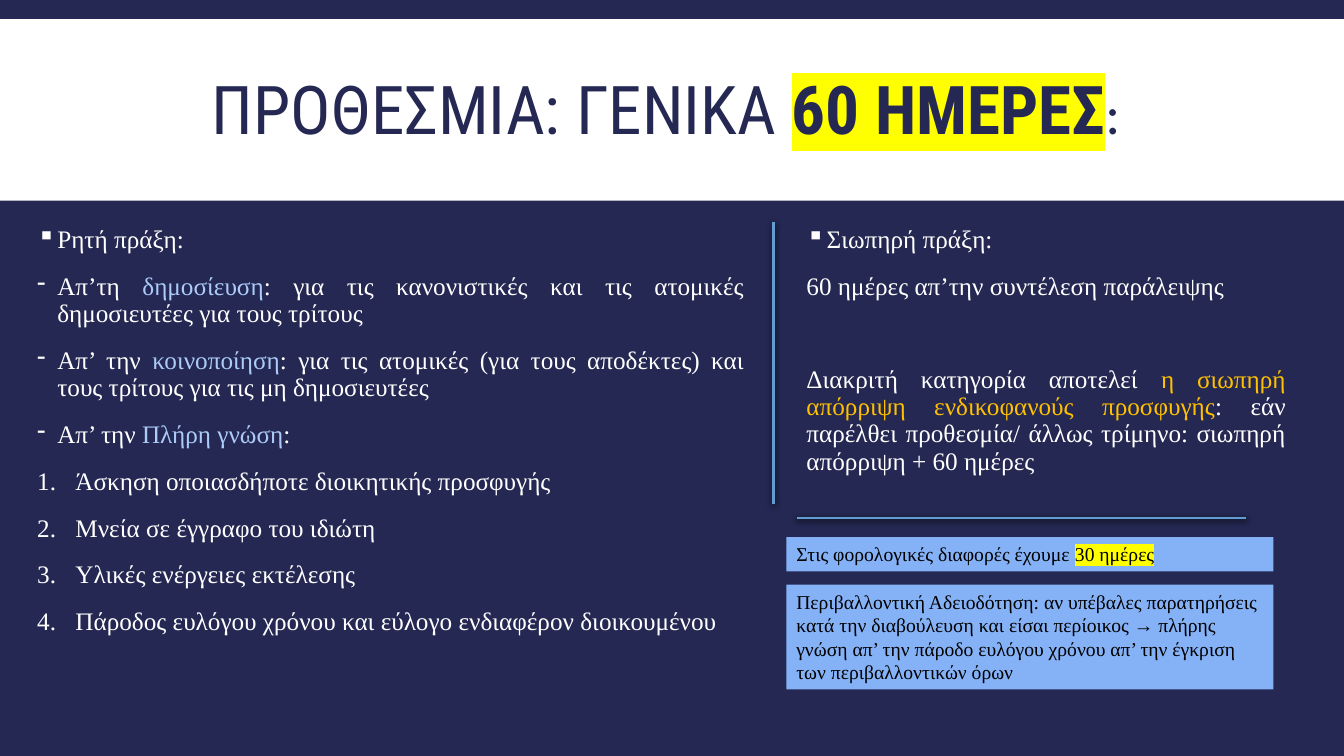
from lxml import etree
from pptx import Presentation
from pptx.dml.color import RGBColor
from pptx.enum.shapes import MSO_CONNECTOR, MSO_SHAPE
from pptx.enum.text import MSO_ANCHOR, PP_ALIGN
from pptx.oxml import parse_xml
from pptx.oxml.ns import nsdecls, qn
from pptx.util import Inches, Pt

NAVY, WHITE, BLACK, YELLOW = "242852", "FFFFFF", "000000", "FFFF00"
PALE, ORANGE, LINE, BOX = "ACCBF9", "FFC000", "629DD1", "85B2F6"
SERIF = "Times New Roman"


def rgb(color):
    return RGBColor.from_string(color)


def add_run(p, text, size, font, color, highlight=None):
    r = p.add_run()
    r.text = text
    r.font.size, r.font.name = Pt(size), font
    r.font.color.rgb = rgb(color)
    if highlight:
        fill = r.font._element.find(qn("a:solidFill"))
        fill.addnext(parse_xml(f'<a:highlight {nsdecls("a")}>'
                               f'<a:srgbClr val="{highlight}"/></a:highlight>'))
    return r


prs = Presentation()
prs.slide_width, prs.slide_height = Inches(13.33), Inches(7.5)
s = prs.slides.add_slide(prs.slide_layouts[6])
s.background.fill.solid()
s.background.fill.fore_color.rgb = rgb(NAVY)

# Title band and the two note boxes
bands = [
    (0, 0.19, 13.33, 1.8, WHITE, []),
    (7.8, 5.33, 4.83, 0.34, BOX,
     [("Στις φορολογικές διαφορές έχουμε ", None), ("30 ημέρες", YELLOW)]),
    (7.8, 5.8, 4.83, 1.04, BOX,
     [("Περιβαλλοντική Αδειοδότηση: αν υπέβαλες παρατηρήσεις κατά την διαβούλευση "
       "και είσαι περίοικος → πλήρης γνώση απ’ την πάροδο ευλόγου χρόνου απ’ την "
       "έγκριση των περιβαλλοντικών όρων", None)]),
]
for x, y, w, h, color, runs in bands:
    sp = s.shapes.add_shape(MSO_SHAPE.RECTANGLE, Inches(x), Inches(y), Inches(w), Inches(h))
    sp.shadow.inherit = False
    sp.fill.solid()
    sp.fill.fore_color.rgb = rgb(color)
    sp.line.fill.background()
    tf = sp.text_frame
    tf.word_wrap, tf.vertical_anchor = True, MSO_ANCHOR.TOP
    tf.paragraphs[0].alignment = PP_ALIGN.LEFT
    for text, highlight in runs:
        add_run(tf.paragraphs[0], text, 14, SERIF, BLACK, highlight)

# Title
title = s.shapes.add_textbox(Inches(1.32), Inches(0.31), Inches(10.7), Inches(1.65))
tf = title.text_frame
tf.word_wrap, tf.vertical_anchor = True, MSO_ANCHOR.MIDDLE
p = tf.paragraphs[0]
p.alignment, p.line_spacing = PP_ALIGN.CENTER, 0.85
add_run(p, "ΠΡΟΘΕΣΜΙΑ: ΓΕΝΙΚΑ ", 48, "Roboto Condensed", NAVY)
add_run(p, "60 ΗΜΕΡΕΣ", 48, "Roboto Condensed", NAVY, YELLOW).font.bold = True
add_run(p, ": ", 40, "Calibri", NAVY)

# Text columns: each paragraph is (bullet, space before, runs)
explicit_act = [
    ("▪", 0, [("Ρητή πράξη:", WHITE)]),
    ("-", 12, [("Απ’τη ", WHITE), ("δημοσίευση", PALE),
               (": για τις κανονιστικές και τις ατομικές δημοσιευτέες για τους τρίτους", WHITE)]),
    ("-", 12, [("Απ’ την ", WHITE), ("κοινοποίηση", PALE),
               (": για τις ατομικές (για τους αποδέκτες) και τους τρίτους "
                "για τις μη δημοσιευτέες", WHITE)]),
    ("-", 12, [("Απ’ την ", WHITE), ("Πλήρη γνώση", PALE), (": ", WHITE)]),
    ("1.", 12, [("Άσκηση οποιασδήποτε διοικητικής προσφυγής", WHITE)]),
    ("1.", 12, [("Μνεία σε έγγραφο του ιδιώτη", WHITE)]),
    ("1.", 12, [("Υλικές ενέργειες εκτέλεσης", WHITE)]),
    ("1.", 12, [("Πάροδος ευλόγου χρόνου και εύλογο ενδιαφέρον διοικουμένου", WHITE)]),
]
silent_act = [
    ("▪", 0, [("Σιωπηρή πράξη:", WHITE)]),
    (None, 12, [("60 ημέρες απ’την συντέλεση παράλειψης", WHITE)]),
    (None, 45, [("Διακριτή κατηγορία αποτελεί ", WHITE),
                ("η σιωπηρή απόρριψη ενδικοφανούς προσφυγής", ORANGE),
                (": εάν παρέλθει προθεσμία/ άλλως τρίμηνο: σιωπηρή απόρριψη + 60 ημέρες",
                 WHITE)]),
]
for x, w, paragraphs in [(0.27, 7.21, explicit_act), (7.9, 4.95, silent_act)]:
    tf = s.shapes.add_textbox(Inches(x), Inches(2.2), Inches(w), Inches(4.6)).text_frame
    tf.word_wrap = True
    for i, (bullet, before, runs) in enumerate(paragraphs):
        p = tf.add_paragraph() if i else tf.paragraphs[0]
        p.alignment, p.line_spacing = PP_ALIGN.JUSTIFY, 0.9
        p.space_before, p.space_after = Pt(before), Pt(2)
        if bullet:
            pPr = p._p.get_or_add_pPr()
            indent = Inches(0.38 if bullet == "1." else 0.2)
            pPr.set("marL", str(indent))
            pPr.set("indent", str(-indent))
            color = etree.SubElement(pPr, qn("a:buClr"))
            etree.SubElement(color, qn("a:srgbClr"), val=WHITE)
            if bullet == "1.":
                etree.SubElement(pPr, qn("a:buAutoNum"), type="arabicPeriod")
            else:
                etree.SubElement(pPr, qn("a:buChar"), char=bullet)
        for text, color in runs:
            add_run(p, text, 18, SERIF, color)

# Divider lines with a soft shadow
for x1, y1, x2, y2 in [(7.67, 2.2, 7.67, 5), (7.9, 5.14, 12.36, 5.14)]:
    line = s.shapes.add_connector(MSO_CONNECTOR.STRAIGHT, Inches(x1), Inches(y1),
                                  Inches(x2), Inches(y2))
    line.line.color.rgb, line.line.width = rgb(LINE), Pt(2)
    line._element.spPr.append(parse_xml(
        f'<a:effectLst {nsdecls("a")}><a:outerShdw blurRad="{Pt(4)}" dist="{Pt(1.2)}" '
        f'dir="5400000" rotWithShape="0"><a:srgbClr val="{BLACK}"><a:alpha val="68000"/>'
        '</a:srgbClr></a:outerShdw></a:effectLst>'))

prs.save("out.pptx")
